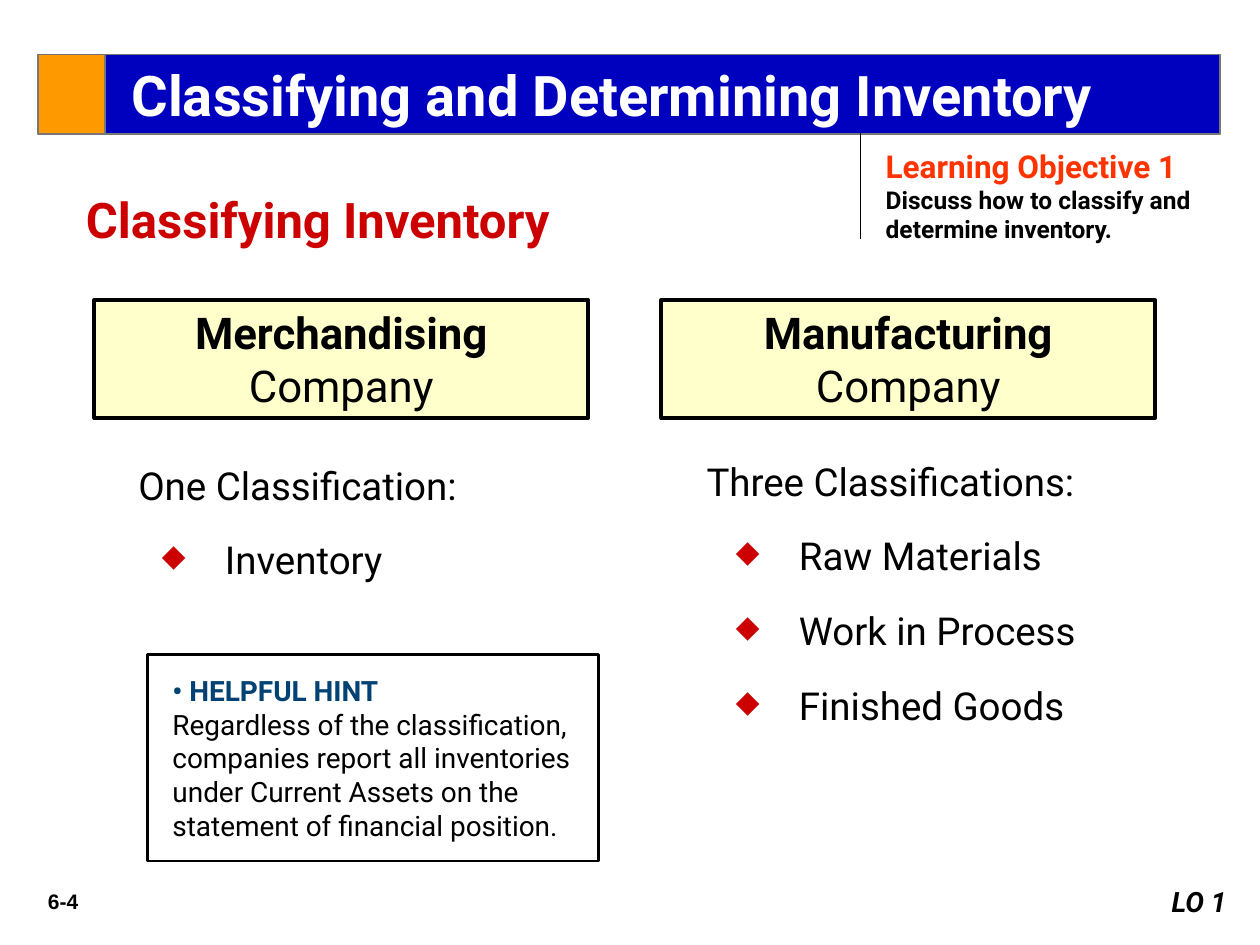
from lxml import etree
from pptx import Presentation
from pptx.dml.color import RGBColor
from pptx.enum import shapes, text
from pptx.oxml.ns import qn
from pptx.util import Pt

LEFT, CENTER, RIGHT = text.PP_ALIGN.LEFT, text.PP_ALIGN.CENTER, text.PP_ALIGN.RIGHT


def rgb(value):
    return RGBColor.from_string(value)


def add_box(s, box, fill=None, line=None, weight=1, inset=7.2, middle=False):
    lengths = [Pt(v) for v in box]
    if fill:
        sp = s.shapes.add_shape(shapes.MSO_SHAPE.RECTANGLE, *lengths)
        sp.shadow.inherit = False
        sp.fill.solid()
        sp.fill.fore_color.rgb = rgb(fill)
        if line:
            sp.line.color.rgb = rgb(line)
            sp.line.width = Pt(weight)
        else:
            sp.line.fill.background()
    else:
        sp = s.shapes.add_textbox(*lengths)
    tf = sp.text_frame
    tf.word_wrap = True
    tf.margin_left = tf.margin_right = Pt(inset)
    tf.margin_top = tf.margin_bottom = Pt(3.6)
    tf.vertical_anchor = text.MSO_ANCHOR.MIDDLE if middle else text.MSO_ANCHOR.TOP
    return tf


def add_run(p, words, size, color="000000", bold=False, italic=False, font="Roboto"):
    r = p.add_run()
    r.text = words
    r.font.name = font
    r.font.size = Pt(size)
    r.font.bold = bold
    r.font.italic = italic
    r.font.color.rgb = rgb(color)


def write(p, words, size, align=LEFT, **style):
    p.alignment = align
    add_run(p, words, size, **style)


def indent(p, margin, first=0):
    pPr = p._p.get_or_add_pPr()
    pPr.set("marL", str(Pt(margin)))
    pPr.set("indent", str(Pt(first)))
    return pPr


def add_bullet(p, margin):
    pPr = indent(p, margin, -36)
    color = etree.SubElement(pPr, qn("a:buClr"))
    etree.SubElement(color, qn("a:srgbClr"), val="CC0000")
    etree.SubElement(pPr, qn("a:buSzPct"), val="80000")
    etree.SubElement(pPr, qn("a:buChar"), char="◆")


def add_title_bar(s, x, y, w, h):
    square = 38.2
    tf = add_box(s, (x + square, y, w - square, h), "0000BF", "777777", inset=6.5, middle=True)
    p = tf.paragraphs[0]
    write(p, "Classifying and Determining Inventory", 32, color="FFFFFF", bold=True)
    indent(p, 8.64)
    add_box(s, (x, y, square, h), "FF9900", "777777")


def add_objective(s, x, y, w, h):
    rule = s.shapes.add_connector(shapes.MSO_CONNECTOR.STRAIGHT, Pt(x), Pt(y), Pt(x), Pt(y + 61))
    rule.line.color.rgb = rgb("000000")
    rule.line.width = Pt(1)
    etree.SubElement(rule._element.spPr, qn("a:effectLst"))
    tf = add_box(s, (x + 7.2, y + 4.8, w, h))
    write(tf.paragraphs[0], "Learning Objective 1", 18, color="FF3300", bold=True)
    write(tf.add_paragraph(), "Discuss how to classify and determine inventory.", 14, bold=True)


def add_company(s, x, y, w, h, kind):
    tf = add_box(s, (x, y, w, h), "FFFFCC", "000000", 2.25)
    p = tf.paragraphs[0]
    write(p, kind + " ", 25, CENTER, bold=True)
    add_run(p, "Company", 25)


def add_classes(s, x, y, w, h, heading, items, margin, bullet_margin):
    tf = add_box(s, (x, y, w, h), "FFFFFF")
    p = tf.paragraphs[0]
    write(p, heading, 22)
    p.line_spacing = 1.2
    indent(p, margin)
    for item in items:
        p = tf.add_paragraph()
        p.level = 1
        write(p, item, 22)
        p.line_spacing = 1.2
        p.space_before = Pt(11)
        add_bullet(p, bullet_margin)


def add_hint(s, x, y, w, h):
    tf = add_box(s, (x, y, w, h), "FFFFFF", "000000", 1.5, inset=14.4, middle=True)
    write(tf.paragraphs[0], "• HELPFUL HINT", 16, color="004274", bold=True)
    write(tf.add_paragraph(), "Regardless of the classification, companies report all inventories "
          "under Current Assets on the statement of financial position.", 16)


def add_footer(s, x, y, w, h):
    number = add_box(s, (x, y + 2, 60, 21.6))
    write(number.paragraphs[0], "6-4", 12, CENTER, bold=True, font="Arial")
    objective = add_box(s, (x + w - 66, y, 66, h), "FFFFFF")
    write(objective.paragraphs[0], "LO 1", 16, RIGHT, bold=True, italic=True)


def main():
    prs = Presentation()
    prs.slide_width, prs.slide_height = Pt(720), Pt(540)
    s = prs.slides.add_slide(prs.slide_layouts[6])
    left, right, width = 54, 378, 282
    add_classes(s, left, 255, width, 129.6, "One Classification:", ["Inventory"], 18, 67.5)
    add_classes(s, right, 252.7, width, 175, "Three Classifications:",
                ["Raw Materials", "Work in Process", "Finished Goods"], 18.72, 71.5)
    for x, kind in ((left, "Merchandising"), (right, "Manufacturing")):
        add_company(s, x, 171.3, width, 67.7, kind)
    add_hint(s, 84.2, 374, 258, 118)
    add_footer(s, 6, 502, 702, 26.6)
    heading = add_box(s, (42, 105, 414, 41))
    write(heading.paragraphs[0], "Classifying Inventory", 28, color="CC0000", bold=True)
    add_title_bar(s, 21.8, 31.2, 675.2, 45.4)
    add_objective(s, 491.8, 75.8, 203, 63.4)
    prs.save("out.pptx")


if __name__ == "__main__":
    main()
